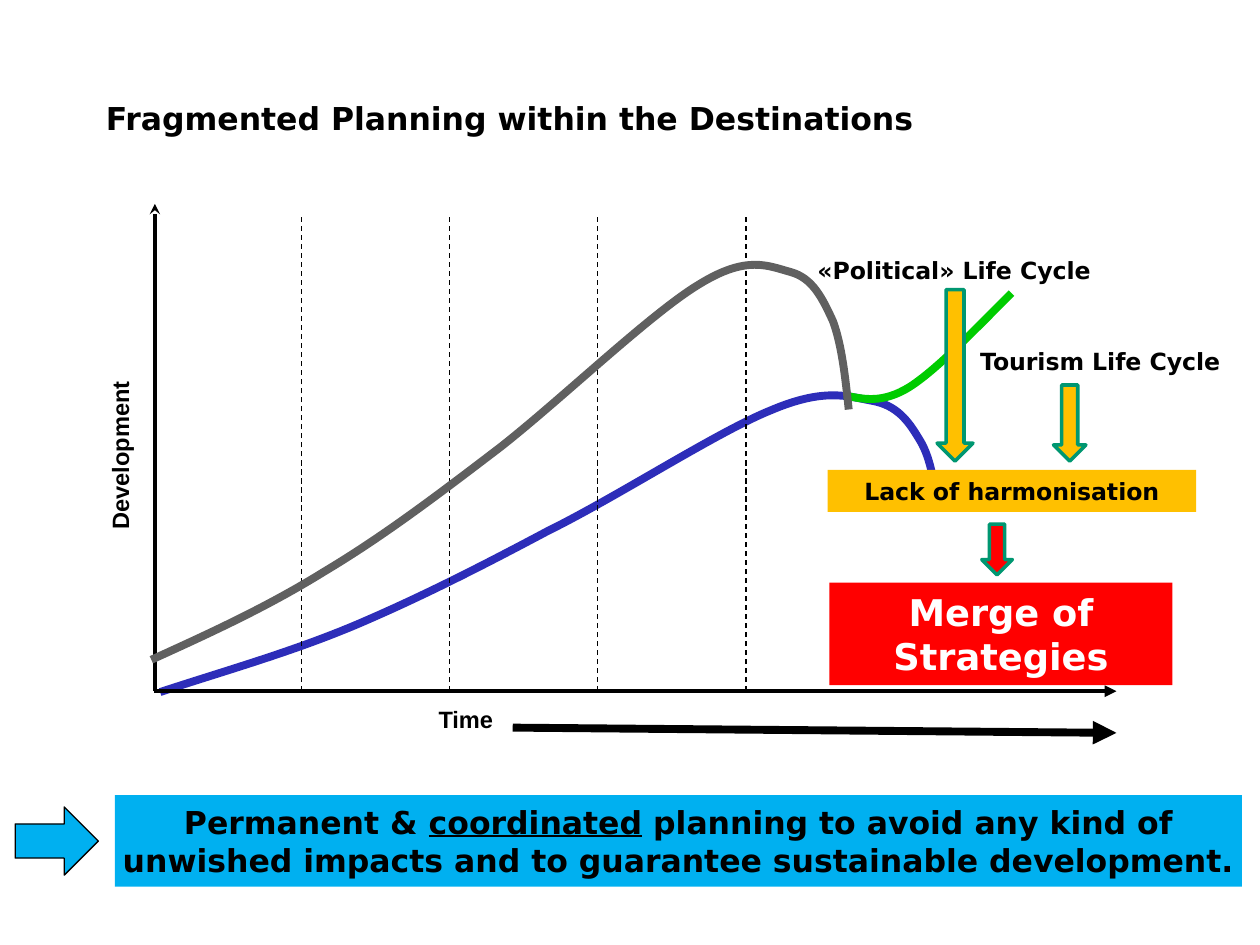
from lxml.etree import SubElement
from pptx import Presentation
from pptx.dml.color import RGBColor
from pptx.enum.dml import MSO_LINE
from pptx.enum.shapes import MSO_CONNECTOR, MSO_SHAPE as SHAPE
from pptx.enum.text import MSO_ANCHOR as ANCHOR, PP_ALIGN as ALIGN
from pptx.oxml.ns import qn
from pptx.util import Pt

BLACK, WHITE, RED = "000000", "FFFFFF", "FF0000"
AMBER, TEAL, SKY = "FFC000", "009771", "00B0F0"
GREY, BLUE, GREEN = "606060", "2D2DB9", "00CC00"
SANS, ARIAL = "DejaVu Sans", "Arial"

# Offsets from the top left of the plot: a start, then three points a curve.
TOURISM_CURVE = [
    (3, 279), (39.5, 267), (77, 256.5), (114, 241),
    (150.5, 225.5), (185, 208), (224.5, 187),
    (265, 167), (321, 130.5), (352, 118),
    (382.5, 105), (396, 110), (409.5, 112.5),
    (424, 115), (430.5, 124), (436.5, 134),
    (443, 144), (445, 157.5), (447, 171.5)]
RENEWAL_CURVE = [
    (394, 109.5), (404.5, 111.5), (415.5, 114.5), (431.5, 104.5),
    (447, 94.5), (468, 72.5), (489.5, 51)]
POLITICAL_CURVE = [
    (-2, 260.5), (31, 245.5), (64, 230.5), (97, 210),
    (130.5, 190), (161.5, 166.5), (197.5, 139),
    (232.5, 111.5), (283.5, 62.5), (311, 46),
    (338.5, 29), (350.5, 35.5), (363.5, 39),
    (376, 42.5), (381.5, 54), (387.5, 67),
    (392.5, 80.5), (394.5, 98.5), (396.5, 117.5)]


def rgb(color):
    return RGBColor.from_string(color)


def write(shape, runs, size=13.5, font=SANS, color=BLACK, align=ALIGN.LEFT,
          anchor=ANCHOR.TOP, inset=None):
    """Fill one paragraph with bold runs, each a (text, underlined) pair."""
    frame = shape.text_frame
    frame.word_wrap = True
    frame.vertical_anchor = anchor
    if inset is not None:
        frame.margin_left = frame.margin_right = Pt(inset)
        frame.margin_top = frame.margin_bottom = Pt(inset)
    paragraph = frame.paragraphs[0]
    paragraph.alignment = align
    for words, underlined in runs:
        run = paragraph.add_run()
        run.text = words
        run.font.name, run.font.size, run.font.bold = font, Pt(size), True
        run.font.underline = underlined
        run.font.color.rgb = rgb(color)


def add_label(slide, words, box, **style):
    label = slide.shapes.add_textbox(*map(Pt, box))
    write(label, [(words, False)], **style)
    return label


def add_block(slide, kind, box, fill, outline=None, weight=2):
    block = slide.shapes.add_shape(kind, *map(Pt, box))
    block.shadow.inherit = False
    block.fill.solid()
    block.fill.fore_color.rgb = rgb(fill)
    if outline:
        block.line.color.rgb = rgb(outline)
        block.line.width = Pt(weight)
    else:
        block.line.fill.background()
    return block


def add_line(slide, start, end, weight, arrowhead=None, dashed=False):
    line = slide.shapes.add_connector(
        MSO_CONNECTOR.STRAIGHT, *map(Pt, (*start, *end)))
    line.line.color.rgb = rgb(BLACK)
    line.line.width = Pt(weight)
    if dashed:
        line.line.dash_style = MSO_LINE.DASH
    properties = line._element.spPr
    if arrowhead:
        SubElement(properties.find(qn("a:ln")), qn("a:tailEnd"), type=arrowhead)
    SubElement(properties, qn("a:effectLst"))


def add_curve(slide, left, top, points, color):
    """Draw a chain of cubic curves through every third point."""
    (x, y), *rest = [(Pt(left + dx), Pt(top + dy)) for dx, dy in points]
    builder = slide.shapes.build_freeform(x, y)
    builder.add_line_segments(rest, close=False)
    curve = builder.convert_to_shape()
    curve.shadow.inherit = False
    curve.fill.background()
    curve.line.color.rgb = rgb(color)
    curve.line.width = Pt(4.5)
    # The builder makes straight segments: regroup them by threes.
    path = next(curve._element.iter(qn("a:path")))
    segments = path.findall(qn("a:lnTo"))
    for first in range(0, len(segments), 3):
        cubic = SubElement(path, qn("a:cubicBezTo"))
        for segment in segments[first:first + 3]:
            cubic.append(segment[0])
            path.remove(segment)


def add_title(slide, box):
    add_label(slide, "Fragmented Planning within the Destinations", box,
              size=18, inset=4)


def add_life_cycles(slide, left, top, width, height):
    right, bottom = left + width, top + height
    add_curve(slide, left, top, TOURISM_CURVE, BLUE)
    add_curve(slide, left, top, RENEWAL_CURVE, GREEN)

    add_line(slide, (left, bottom), (left, top), 2, "stealth")
    add_line(slide, (left - 0.5, bottom), (right, bottom), 2.25, "triangle")
    for stage in range(4):
        x = left + 83.75 + 84.7 * stage
        add_line(slide, (x, bottom), (x, top + 6), 0.75, dashed=True)

    add_label(slide, "Time", (left + 155, bottom + 4.5, 135, 29), font=ARIAL)
    add_line(slide, (left + 204.5, bottom + 20.8), (right, bottom + 23.8),
             4.5, "triangle")
    development = add_label(
        slide, "Development", (left - 105.8, top + 131.2, 173, 25),
        font=ARIAL, align=ALIGN.CENTER)
    development.rotation = 270

    add_label(slide, "Tourism Life Cycle", (left + 464.5, top + 78, 158.5, 24))
    add_curve(slide, left, top, POLITICAL_CURVE, GREY)
    add_label(slide, "«Political» Life Cycle",
              (left + 371.5, top + 26, 195, 33))


def add_consequences(slide, left, top):
    centred = dict(align=ALIGN.CENTER, anchor=ANCHOR.MIDDLE)
    harmonisation = add_block(
        slide, SHAPE.RECTANGLE, (left, top + 103, 210.5, 24), AMBER)
    write(harmonisation, [("Lack of harmonisation", False)], **centred)
    merge = add_block(
        slide, SHAPE.RECTANGLE, (left + 1, top + 167.5, 196, 58.5), RED)
    write(merge, [("Merge of Strategies", False)], size=21, color=WHITE,
          **centred)
    for dx, dy, width, height, fill in [
            (62.5, 0, 20.5, 98, AMBER),
            (129, 54.5, 18.5, 43.5, AMBER),
            (88, 134, 17.5, 29, RED)]:
        add_block(slide, SHAPE.DOWN_ARROW,
                  (left + dx, top + dy, width, height), fill, TEAL)


def add_conclusion(slide, left, top, width, height):
    banner = add_block(
        slide, SHAPE.RECTANGLE, (left + 57, top, width - 57, height), SKY)
    write(banner, [
        ("Permanent & ", False), ("coordinated", True),
        (" planning to avoid any kind of unwished impacts and to guarantee "
         "sustainable development.", False)],
        size=18, align=ALIGN.CENTER, anchor=ANCHOR.MIDDLE, inset=4)
    add_block(slide, SHAPE.RIGHT_ARROW, (left, top + 6.8, 47.5, 39), SKY,
              BLACK, 0.75)


def main():
    deck = Presentation()
    deck.slide_width, deck.slide_height = Pt(720), Pt(540)
    slide = deck.slides.add_slide(deck.slide_layouts[6])
    add_title(slide, (56.5, 52.5, 484, 30))
    add_life_cycles(slide, 88.5, 116.5, 549.5, 278.5)
    add_consequences(slide, 473, 165.5)
    add_conclusion(slide, 8.7, 454.3, 701, 52.3)
    deck.save("out.pptx")


if __name__ == "__main__":
    main()
